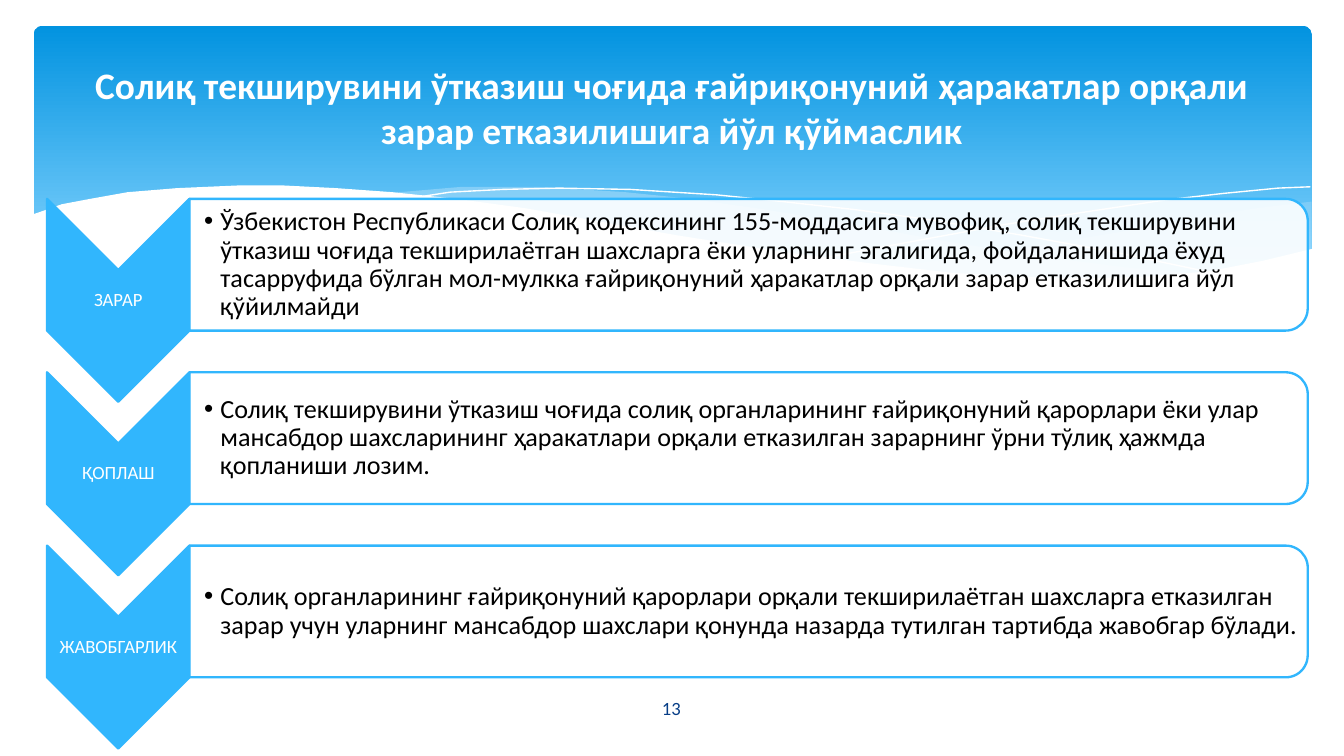
from lxml import etree
from pptx import Presentation
from pptx.dml.color import RGBColor
from pptx.enum.shapes import MSO_SHAPE
from pptx.enum.text import MSO_ANCHOR, PP_ALIGN
from pptx.oxml.ns import qn
from pptx.util import Inches, Pt

CENTER, LEFT = PP_ALIGN.CENTER, PP_ALIGN.LEFT
MIDDLE = MSO_ANCHOR.MIDDLE
ROUND_RECT = MSO_SHAPE.ROUNDED_RECTANGLE
CHEVRON = MSO_SHAPE.CHEVRON
ROUND_TOP = MSO_SHAPE.ROUND_2_SAME_RECTANGLE

WHITE = RGBColor(0xFF, 0xFF, 0xFF)
BLACK = RGBColor(0, 0, 0)
SKY = RGBColor(0x31, 0xB6, 0xFD)
NAVY = RGBColor(0x07, 0x3E, 0x87)
BAND_TOP = RGBColor(0x02, 0x93, 0xE0)
BAND_BOTTOM = RGBColor(0x83, 0xD3, 0xFE)
MIST = RGBColor(0xC6, 0xE7, 0xFC)
FONT = "Calibri"

TITLE = ("Солиқ текширувини ўтказиш чоғида ғайриқонуний ҳаракатлар орқали "
         "зарар етказилишига йўл қўймаслик")
PAGE = "13"
STEPS = [
    ("ЗАРАР",
     "Ўзбекистон Республикаси Солиқ кодексининг 155-моддасига мувофиқ, солиқ "
     "текширувини ўтказиш чоғида текширилаётган шахсларга ёки уларнинг эгалигида, "
     "фойдаланишида ёхуд тасарруфида бўлган мол-мулкка ғайриқонуний ҳаракатлар "
     "орқали зарар етказилишига йўл қўйилмайди"),
    ("ҚОПЛАШ",
     "Солиқ текширувини ўтказиш чоғида солиқ органларининг ғайриқонуний қарорлари "
     "ёки улар мансабдор шахсларининг ҳаракатлари орқали етказилган зарарнинг ўрни "
     "тўлиқ ҳажмда қопланиши лозим."),
    ("ЖАВОБГАРЛИК",
     "Солиқ органларининг ғайриқонуний қарорлари орқали текширилаётган шахсларга "
     "етказилган зарар учун уларнинг мансабдор шахслари қонунда назарда тутилган "
     "тартибда жавобгар бўлади."),
]

WAVE_UNIT = Inches(0.01)
RIGHT_SWELL = [(976, 150), (935, 155), (891, 162), (832, 173), (753, 186), (661, 199),
               (705, 203), (757, 207), (803, 208), (854, 207), (897, 203), (935, 196),
               (976, 185)]
LONG_SWELL = [(893, 204), (837, 199), (775, 191), (706, 180), (629, 166), (569, 156),
              (514, 148), (465, 143), (399, 139), (344, 139), (286, 144), (342, 149),
              (404, 158), (491, 174), (566, 186), (634, 196), (695, 203), (748, 207),
              (807, 209), (857, 208), (893, 204)]
FALLING_CREST = [(309, 147), (335, 143), (374, 141), (416, 140), (469, 141), (533, 145),
                 (582, 150), (636, 156), (695, 164), (760, 175), (831, 188), (907, 204)]
RISING_CREST = [(613, 192), (672, 181), (748, 167), (806, 158), (866, 149), (910, 144),
                (951, 140), (975, 139)]
FOREGROUND = [(977, 185), (940, 194), (899, 202), (850, 206), (809, 207), (761, 206),
              (708, 203), (648, 196), (579, 187), (503, 175), (447, 165), (391, 155),
              (340, 148), (292, 143), (250, 140), (211, 138), (177, 138), (132, 140),
              (95, 143), (67, 148), (46, 152), (29, 158), (23, 160), (23, 247), (977, 247)]
WAVES = [(RIGHT_SWELL, MIST, 29), (LONG_SWELL, MIST, 40), (FALLING_CREST, None, 100),
         (RISING_CREST, None, 100), (FOREGROUND, WHITE, 100)]

SLIDE_W = 10
SLIDE_H = SLIDE_W * 9 / 16
ROW_TOP, ROW_PITCH = 1.48, 1.29
ARROW_LEFT, ARROW_W, ARROW_H = 0.35, 1.06, 1.51
PANEL_LEFT, PANEL_W, PANEL_H = ARROW_LEFT + ARROW_W, 8.32, 0.98
PANEL_PAD = 0.05


def paint(shape, color, opacity=100):
    shape.shadow.inherit = False
    shape.fill.solid()
    shape.fill.fore_color.rgb = color
    if opacity < 100:
        rgb = shape.fill._xPr.find(".//" + qn("a:srgbClr"))
        etree.SubElement(rgb, qn("a:alpha"), val=str(opacity * 1000))


def add_wave(slide, points, color, opacity):
    builder = slide.shapes.build_freeform(*points[0], scale=WAVE_UNIT)
    builder.add_line_segments(points[1:], close=color is not None)
    wave = builder.convert_to_shape()
    if color is None:
        wave.shadow.inherit = False
        wave.fill.background()
        wave.line.color.rgb = WHITE
        wave.line.width = Pt(0)
    else:
        paint(wave, color, opacity)
        wave.line.fill.background()


def add_turned(slide, kind, left, top, width, height, opacity=100, color=SKY):
    middle_x, middle_y = left + width / 2, top + height / 2
    shape = slide.shapes.add_shape(
        kind, Inches(middle_x - height / 2), Inches(middle_y - width / 2),
        Inches(height), Inches(width))
    shape.rotation = 90
    paint(shape, color, opacity)
    shape.line.color.rgb = SKY
    shape.line.width = Pt(1.25)


def add_text(slide, text, box, size, color, align=CENTER, left_inset=0.01):
    frame = slide.shapes.add_textbox(*map(Inches, box)).text_frame
    frame.word_wrap = True
    frame.vertical_anchor = MIDDLE
    frame.margin_left = Inches(left_inset)
    frame.margin_top = frame.margin_right = frame.margin_bottom = Inches(0.01)
    paragraph = frame.paragraphs[0]
    paragraph.text = text
    paragraph.alignment = align
    paragraph.line_spacing = 0.9
    style(paragraph, size, color)
    return paragraph


def style(paragraph, size, color):
    paragraph.font.name = FONT
    paragraph.font.size = Pt(size)
    paragraph.font.color.rgb = color


def add_bullet(paragraph):
    properties = paragraph._p.get_or_add_pPr()
    properties.set("marL", str(Inches(0.12)))
    properties.set("indent", str(-Inches(0.12)))
    etree.SubElement(properties, qn("a:buFont"), typeface="Arial")
    etree.SubElement(properties, qn("a:buChar"), char="•")
    properties.append(properties.find(qn("a:defRPr")))


def add_band(slide):
    band = slide.shapes.add_shape(
        ROUND_RECT, Inches(0.25), Inches(0.19), Inches(9.51), Inches(2.02))
    band.adjustments[0] = 0.034
    band.shadow.inherit = False
    band.line.fill.background()
    band.fill.gradient()
    band.fill.gradient_angle = 270
    stops = zip(band.fill.gradient_stops, (0, 0.9), (BAND_TOP, BAND_BOTTOM))
    for stop, position, color in stops:
        stop.position = position
        stop.color.rgb = color


def add_step(slide, row, label, detail):
    top = ROW_TOP + row * ROW_PITCH
    add_turned(slide, CHEVRON, ARROW_LEFT, top, ARROW_W, ARROW_H)
    add_text(slide, label, (ARROW_LEFT, top + ARROW_W / 2, ARROW_W, ARROW_H - ARROW_W),
             10, WHITE)
    add_turned(slide, ROUND_TOP, PANEL_LEFT, top, PANEL_W, PANEL_H, 90, WHITE)
    add_bullet(add_text(
        slide, detail,
        (PANEL_LEFT, top + PANEL_PAD, PANEL_W - PANEL_PAD, PANEL_H - 2 * PANEL_PAD),
        14, BLACK, LEFT, 0.11))


def add_title(slide):
    title = slide.shapes.title
    title.left, title.top, title.width, title.height = map(Inches, (0.5, 0.28, 9, 1.03))
    title.text_frame.text = TITLE
    title.text_frame.vertical_anchor = MIDDLE
    paragraph = title.text_frame.paragraphs[0]
    paragraph.alignment = CENTER
    paragraph.font.bold = True
    style(paragraph, 20, WHITE)
    slide.shapes._spTree.append(title._element)


def main():
    deck = Presentation()
    deck.slide_width, deck.slide_height = Inches(SLIDE_W), Inches(SLIDE_H)
    slide = deck.slides.add_slide(deck.slide_layouts[5])
    add_band(slide)
    for points, color, opacity in WAVES:
        add_wave(slide, points, color, opacity)
    for row, (label, detail) in enumerate(STEPS):
        add_step(slide, row, label, detail)
    add_title(slide)
    add_text(slide, PAGE, (4.36, 5.13, 1.27, 0.3), 10, NAVY)
    deck.save("out.pptx")


if __name__ == "__main__":
    main()
